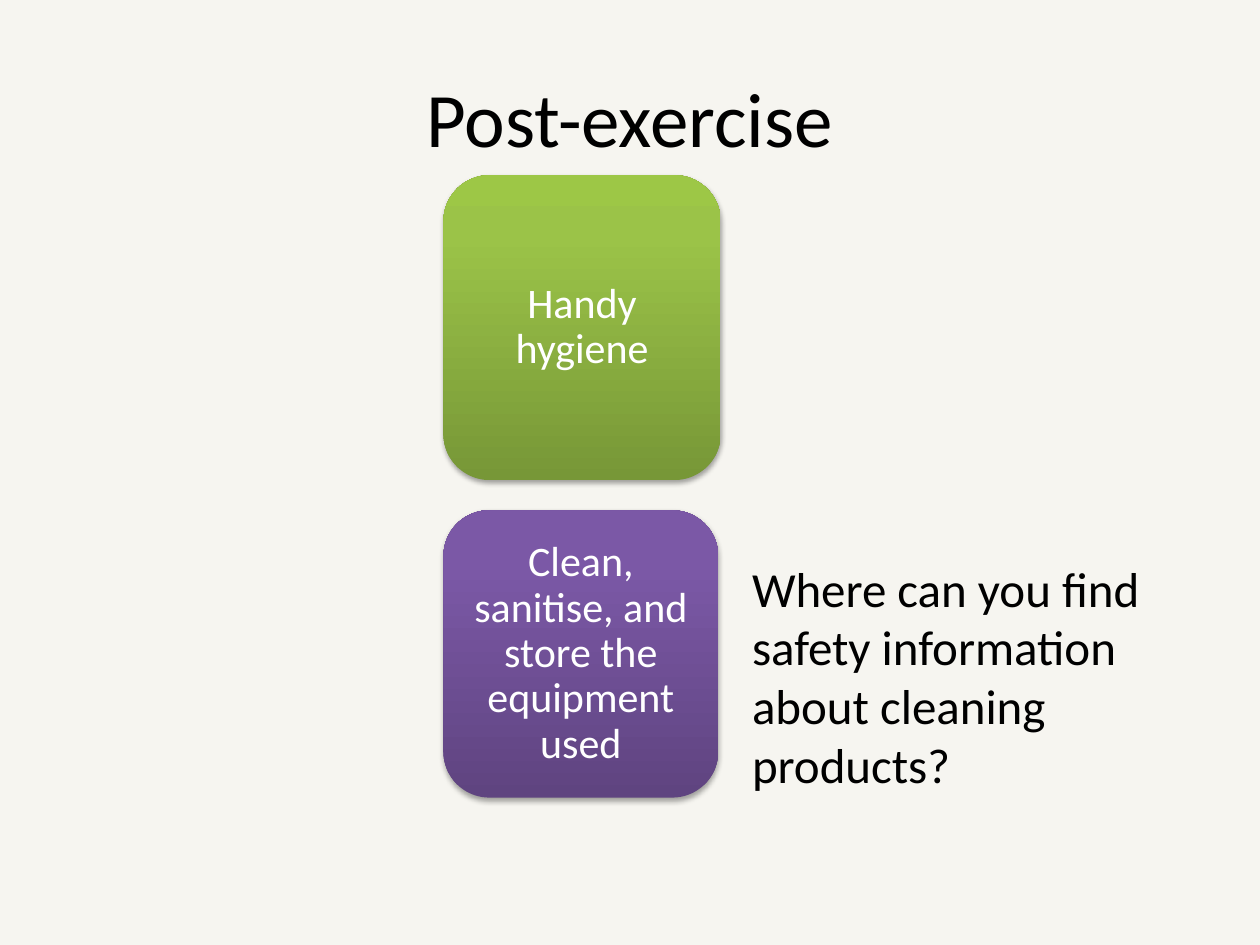
from copy import deepcopy

from lxml import etree
from pptx import Presentation
from pptx.dml.color import RGBColor
from pptx.enum.shapes import MSO_SHAPE
from pptx.enum.text import MSO_ANCHOR, PP_ALIGN
from pptx.oxml.ns import qn
from pptx.util import Inches, Pt

ROUNDED = MSO_SHAPE.ROUNDED_RECTANGLE
MIDDLE, TOP = MSO_ANCHOR.MIDDLE, MSO_ANCHOR.TOP
CENTER, LEFT = PP_ALIGN.CENTER, PP_ALIGN.LEFT

BLACK = RGBColor(0x00, 0x00, 0x00)
WHITE = RGBColor(0xFF, 0xFF, 0xFF)
PAPER = RGBColor(0xF6, 0xF5, 0xF0)
GREENS = [RGBColor(0x77, 0x97, 0x37), RGBColor(0x9B, 0xC3, 0x48), RGBColor(0x9D, 0xC7, 0x46)]
PURPLES = [RGBColor(0x5F, 0x44, 0x80), RGBColor(0x7B, 0x58, 0xA6), RGBColor(0x7C, 0x57, 0xA8)]
STOP_POSITIONS = [0, 0.8, 1]

CARD_LEFT = 3.52
CARDS = [
    ("Handy hygiene", 1.39, 2.2, 2.42, GREENS),
    ("Clean, sanitise, and store the equipment used", 4.05, 2.18, 2.28, PURPLES),
]


def write_text(frame, wording, size, color, align, anchor, spacing=1.0):
    frame.word_wrap = True
    frame.vertical_anchor = anchor
    paragraph = frame.paragraphs[0]
    paragraph.alignment = align
    paragraph.line_spacing = spacing
    run = paragraph.add_run()
    run.text = wording
    for name, value in {"name": "Calibri", "size": Pt(size)}.items():
        setattr(run.font, name, value)
    run.font.color.rgb = color


def add_label(slide, wording, box, size, align, anchor):
    label = slide.shapes.add_textbox(*map(Inches, box))
    write_text(label.text_frame, wording, size, BLACK, align, anchor)


def fill_gradient(card, colors):
    card.fill.gradient()
    card.fill.gradient_angle = 90
    stop_list = card._element.spPr.find(qn("a:gradFill")).find(qn("a:gsLst"))
    stop_list.append(deepcopy(stop_list[-1]))
    for stop, color, position in zip(card.fill.gradient_stops, colors, STOP_POSITIONS):
        stop.color.rgb = color
        stop.position = position


def add_shadow(card):
    card.shadow.inherit = False
    effects = card._element.spPr.find(qn("a:effectLst"))
    shadow = etree.SubElement(
        effects, qn("a:outerShdw"), blurRad=str(Pt(3.1)), dist=str(Pt(1.8)),
        dir="5400000", rotWithShape="0")
    color = etree.SubElement(shadow, qn("a:srgbClr"), val=str(BLACK))
    etree.SubElement(color, qn("a:alpha"), val="35000")


def add_card(slide, wording, top, width, height, colors):
    box = map(Inches, (CARD_LEFT, top, width, height))
    card = slide.shapes.add_shape(ROUNDED, *box)
    fill_gradient(card, colors)
    card.line.fill.background()
    add_shadow(card)
    for side in ("left", "right", "top", "bottom"):
        setattr(card.text_frame, f"margin_{side}", Inches(0.1))
    write_text(card.text_frame, wording, 24, WHITE, CENTER, MIDDLE, 0.9)


def main():
    deck = Presentation()
    deck.slide_width, deck.slide_height = Inches(10), Inches(7.5)
    slide = deck.slides.add_slide(deck.slide_layouts[6])
    background = slide.background.fill
    background.solid()
    background.fore_color.rgb = PAPER

    add_label(slide, "Post-exercise", (0.5, 0.3, 9, 1.25), 44, CENTER, MIDDLE)
    for card in CARDS:
        add_card(slide, *card)
    add_label(slide, "Where can you find safety information about cleaning products?",
              (5.87, 4.38, 3.78, 1.99), 28, LEFT, TOP)
    deck.save("out.pptx")


if __name__ == "__main__":
    main()
